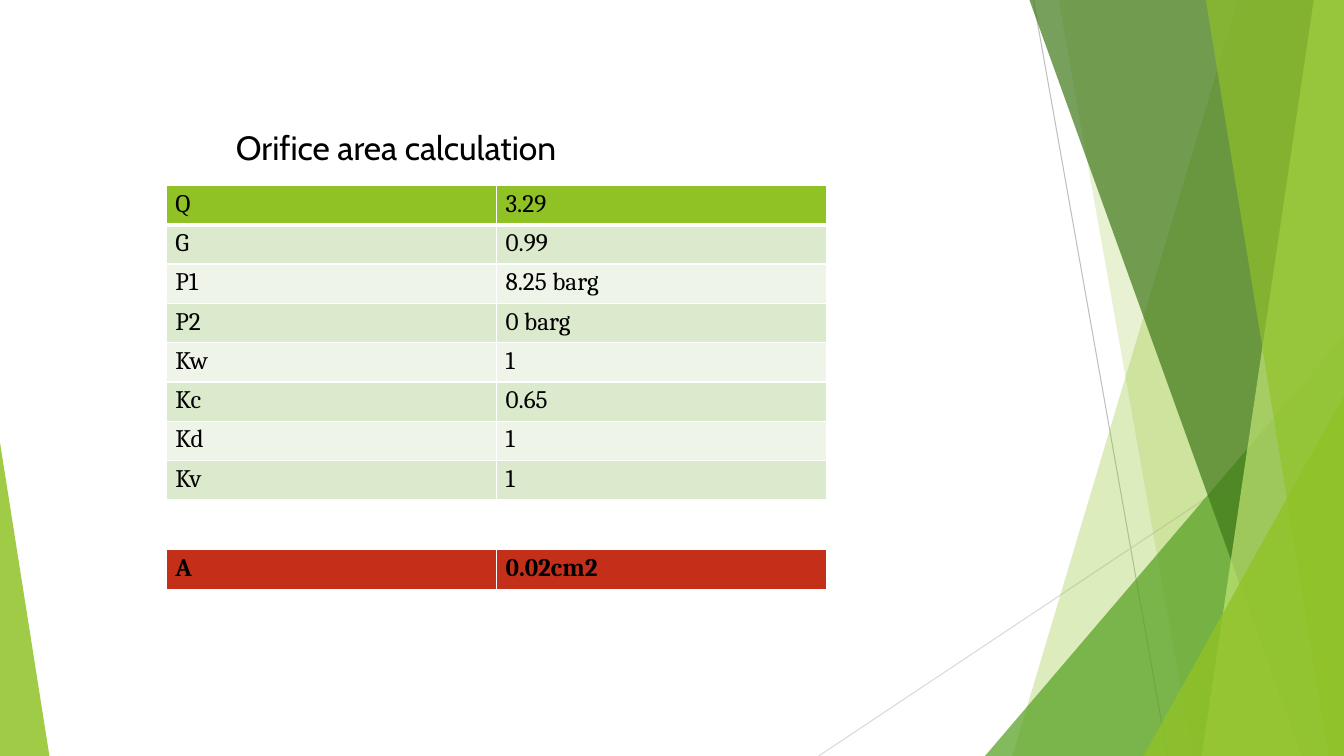
import pptx
import pptx.util
import pptx.dml.color
import pptx.enum.shapes
import pptx.enum.text
import pptx.oxml
import pptx.oxml.ns

Inches = pptx.util.Inches
Pt = pptx.util.Pt
RGBColor = pptx.dml.color.RGBColor
Kind = pptx.enum.shapes.MSO_SHAPE
qn = pptx.oxml.ns.qn
SPACE = pptx.oxml.ns.nsdecls("a")

WHITE = RGBColor(0xFF, 0xFF, 0xFF)
BLACK = RGBColor(0, 0, 0)
LIME = RGBColor(0x90, 0xC2, 0x26)
LEAF = RGBColor(0x54, 0xA0, 0x21)
MOSS = RGBColor(0x3F, 0x78, 0x19)
PALE = RGBColor(0xC0, 0xE4, 0x74)
BAND = RGBColor(0xDB, 0xE9, 0xCD)
MIST = RGBColor(0xEE, 0xF4, 0xE8)
RED = RGBColor(0xC4, 0x2F, 0x1A)
GREY = RGBColor(0xBF, 0xBF, 0xBF)
SILVER = RGBColor(0xD9, 0xD9, 0xD9)

WIDE, HIGH = 13.33, 7.5
INPUTS = [
    ("Q", "3.29"), ("G", "0.99"), ("P1", "8.25 barg"), ("P2", "0 barg"),
    ("Kw", "1"), ("Kc", "0.65"), ("Kd", "1"), ("Kv", "1"),
]
RESULT = [("A", "0.02cm2")]


def tint(shape, color, alpha):
    shape.shadow.inherit = False
    shape.line.fill.background()
    shape.fill.solid()
    shape.fill.fore_color.rgb = color
    tone = shape.fill._xPr.find(qn("a:solidFill"))[0]
    tone.append(pptx.oxml.parse_xml(f'<a:alpha {SPACE} val="{alpha * 1000}"/>'))


def add_line(slide, start, end, color):
    line = slide.shapes.add_connector(
        pptx.enum.shapes.MSO_CONNECTOR.STRAIGHT,
        *(Inches(n) for n in start + end))
    line.line.color.rgb = color
    line.line.width = Pt(0.75)
    line._element.spPr.append(pptx.oxml.parse_xml(f"<a:effectLst {SPACE}/>"))


def add_pane(slide, box, upper, lower, color, alpha):
    left, top, width, height = box
    right, base = left + width, top + height
    spots = [(left + upper, top), (right, top), (right, base), (left + lower, base)]
    spots = [(Inches(x), Inches(y)) for x, y in spots]
    pen = slide.shapes.build_freeform(*spots[0])
    pen.add_line_segments(spots[1:], close=True)
    tint(pen.convert_to_shape(), color, alpha)


def add_wedge(slide, box, peak, color, alpha):
    wedge = slide.shapes.add_shape(Kind.ISOSCELES_TRIANGLE, *(Inches(n) for n in box))
    wedge.adjustments[0] = peak
    tint(wedge, color, alpha)


def add_facets(slide, box):
    left, top, width, height = box
    right, base = left + width, top + height

    def pane(upper, lower, color, alpha):
        add_pane(slide, box, upper, lower, color, alpha)

    def wedge(wide, high, color, alpha):
        add_wedge(slide, (right - wide, base - high, wide, high), 1, color, alpha)

    add_line(slide, (left + 2.13, top), (left + 3.46, base), GREY)
    add_line(slide, (right, top + 4.03), (left, base), SILVER)
    pane(4.16, 1.92, LIME, 30)
    pane(2.38, 3.71, LIME, 20)
    wedge(3.56, 4.17, LEAF, 72)
    pane(2.09, 4.79, MOSS, 70)
    pane(4.91, 3.8, PALE, 70)
    pane(3.84, 5.06, LIME, 65)
    wedge(1.99, 3.57, LIME, 80)


def add_title(slide, box, text):
    frame = slide.shapes.add_textbox(*(Inches(n) for n in box)).text_frame
    frame.word_wrap = True
    frame.margin_left = frame.margin_right = 0
    frame.margin_top = frame.margin_bottom = 0
    line = frame.paragraphs[0]
    line.text = text
    line.font.name = "Cabin"
    line.font.size = Pt(24)
    line.font.color.rgb = BLACK


def style_cell(cell, text, color, bold, base):
    cell.text = text
    cell.margin_left = cell.margin_right = Inches(0.09)
    cell.margin_top = cell.margin_bottom = Inches(0.04)
    line = cell.text_frame.paragraphs[0]
    line.font.name = "Cambria"
    line.font.size = Pt(18)
    line.font.bold = bold
    line.font.color.rgb = BLACK
    props = cell._tc.get_or_add_tcPr()
    for side, width in zip("LRTB", (1, 1, 1, base)):
        props.append(pptx.oxml.parse_xml(
            f'<a:ln{side} {SPACE} w="{Pt(width)}"><a:solidFill>'
            f'<a:srgbClr val="{WHITE}"/></a:solidFill></a:ln{side}>'))
    cell.fill.solid()
    cell.fill.fore_color.rgb = color


def add_grid(slide, box, rows, head, bold=False):
    table = slide.shapes.add_table(len(rows), 2, *(Inches(n) for n in box)).table
    table.horz_banding = False
    table.first_row = False
    for i, row in enumerate(rows):
        table.rows[i].height = Inches(box[3] / len(rows))
        color = head if i == 0 else (MIST, BAND)[i % 2]
        for j, text in enumerate(row):
            style_cell(table.cell(i, j), text, color, bold, 1 if i else 3)


def main():
    deck = pptx.Presentation()
    deck.slide_width, deck.slide_height = Inches(WIDE), Inches(HIGH)
    slide = deck.slides.add_slide(deck.slide_layouts[6])
    add_facets(slide, (8.12, 0, WIDE - 8.12, HIGH))
    add_wedge(slide, (0, 4.39, 0.49, 3.11), 0, LIME, 85)
    add_title(slide, (2.34, 1.26, 5, 0.41), "Orifice area calculation")
    add_grid(slide, (1.65, 1.84, 6.55, 3.12), INPUTS, LIME)
    add_grid(slide, (1.65, 5.45, 6.55, 0.41), RESULT, RED, True)
    deck.save("out.pptx")


if __name__ == "__main__":
    main()
